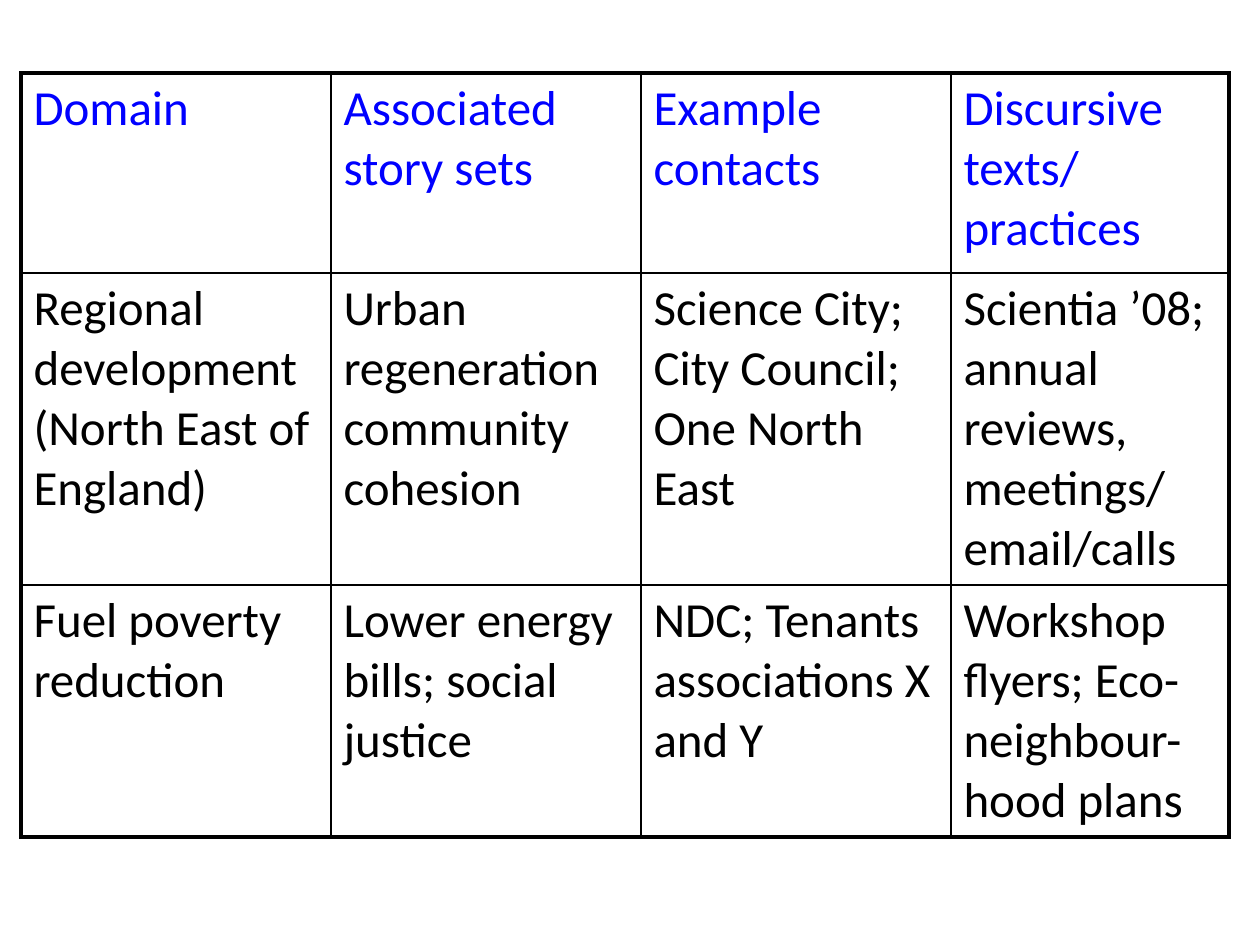
import pptx
import pptx.dml.color
import pptx.oxml
import pptx.oxml.ns
import pptx.util

ROWS = [
    ["Domain", "Associated story sets", "Example contacts", "Discursive texts/ practices"],
    ["Regional development (North East of England)",
     "Urban regeneration community cohesion",
     "Science City; City Council; One North East",
     "Scientia ’08; annual reviews, meetings/ email/calls"],
    ["Fuel poverty reduction",
     "Lower energy bills; social justice",
     "NDC; Tenants associations X and Y",
     "Workshop flyers; Eco-neighbour-hood plans"],
]
COLUMN_WIDTHS = [310, 310, 310, 278]
ROW_HEIGHTS = [200, 312, 252]
LEFT, TOP = 21, 73
BLUE = pptx.dml.color.RGBColor(0x00, 0x00, 0xFF)
BLACK = pptx.dml.color.RGBColor(0x00, 0x00, 0x00)
OUTER, INNER = pptx.util.Pt(2.25), pptx.util.Pt(1)


def px(length):
    return pptx.util.Emu(round(length * 914400 / 126))


def set_borders(cell, row, column):
    outside = {
        "lnL": column == 0,
        "lnR": column == len(COLUMN_WIDTHS) - 1,
        "lnT": row == 0,
        "lnB": row == len(ROWS) - 1,
    }
    properties = cell._tc.get_or_add_tcPr()
    for position, (side, is_outer) in enumerate(outside.items()):
        properties.insert(position, pptx.oxml.parse_xml(
            f'<a:{side} {pptx.oxml.ns.nsdecls("a")} w="{OUTER if is_outer else INNER}">'
            f'<a:solidFill><a:srgbClr val="{BLACK}"/></a:solidFill></a:{side}>'))


presentation = pptx.Presentation()
presentation.slide_width, presentation.slide_height = px(1260), px(945)
slide = presentation.slides.add_slide(presentation.slide_layouts[6])

table = slide.shapes.add_table(
    len(ROWS), len(COLUMN_WIDTHS), px(LEFT), px(TOP),
    px(sum(COLUMN_WIDTHS)), px(sum(ROW_HEIGHTS))).table
table.horz_banding = False
for column, width in zip(table.columns, COLUMN_WIDTHS):
    column.width = px(width)
for row, height in zip(table.rows, ROW_HEIGHTS):
    row.height = px(height)

for row_index, texts in enumerate(ROWS):
    for column_index, text in enumerate(texts):
        cell = table.cell(row_index, column_index)
        cell.text = text
        cell.fill.background()
        set_borders(cell, row_index, column_index)
        font = cell.text_frame.paragraphs[0].font
        font.name = "Calibri"
        font.size = pptx.util.Pt(28)
        font.bold = False
        font.color.rgb = BLUE if row_index == 0 else BLACK

presentation.save("out.pptx")
